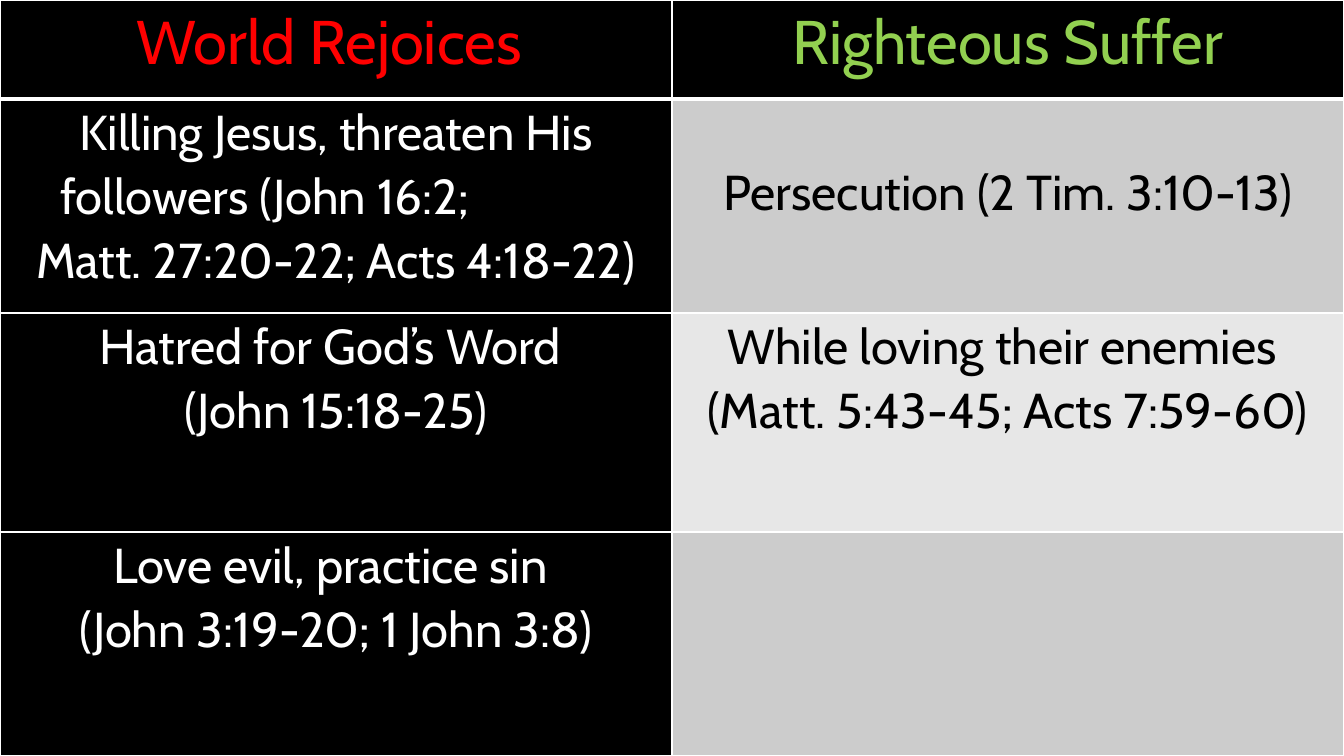
from lxml import etree
from pptx import Presentation
from pptx.dml.color import RGBColor
from pptx.enum.text import PP_ALIGN
from pptx.oxml.ns import qn
from pptx.util import Pt

CENTER = PP_ALIGN.CENTER
LEFT = PP_ALIGN.LEFT

PX = 914400 / 100.8
WIDTH, HEIGHT = 1344, 756
ROW_HEIGHTS = [99, 214, 219, 224]
INSET = 7
FONT = "Cabin"
HEAD_SIZE, BODY_SIZE = 44, 35

BLACK = RGBColor(0x00, 0x00, 0x00)
WHITE = RGBColor(0xFF, 0xFF, 0xFF)
RED = RGBColor(0xFF, 0x00, 0x00)
GREEN = RGBColor(0x92, 0xD0, 0x50)
GRAY = RGBColor(0xCC, 0xCC, 0xCC)
LIGHT_GRAY = RGBColor(0xE7, 0xE7, 0xE7)

HEADINGS = [("World Rejoices ", RED), ("Righteous Suffer", GREEN)]
WORLD = [
    ["Killing Jesus, threaten His", "followers (John 16:2;", "Matt. 27:20-22; Acts 4:18-22)"],
    ["Hatred for God’s Word ", "(John 15:18-25)"],
    ["Love evil, practice sin ", "(John 3:19-20; 1 John 3:8)"],
]
RIGHTEOUS = [
    ["Persecution (2 Tim. 3:10-13)"],
    ["While loving their enemies ", "(Matt. 5:43-45; Acts 7:59-60)"],
    [],
]
RIGHTEOUS_FILLS = [GRAY, LIGHT_GRAY, GRAY]


def px(n):
    return round(n * PX)


def set_borders(cell, bottom=1, top=1):
    tcPr = cell._tc.get_or_add_tcPr()
    widths = {"a:lnL": 1, "a:lnR": 1, "a:lnT": top, "a:lnB": bottom}
    for i, (tag, width) in enumerate(widths.items()):
        ln = etree.Element(qn(tag), w=str(Pt(width)))
        fill = etree.SubElement(ln, qn("a:solidFill"))
        etree.SubElement(fill, qn("a:srgbClr"), val=str(WHITE))
        tcPr.insert(i, ln)


def fill_cell(cell, lines, size, color, fill):
    cell.margin_left = cell.margin_right = px(INSET)
    cell.margin_top = cell.margin_bottom = 0
    cell.fill.solid()
    cell.fill.fore_color.rgb = fill
    tf = cell.text_frame
    for i, line in enumerate(lines):
        p = tf.add_paragraph() if i else tf.paragraphs[0]
        p.alignment = CENTER
        p.line_spacing = 1.07
        r = p.add_run()
        r.text = line
        r.font.name = FONT
        r.font.size = Pt(size)
        r.font.color.rgb = color


def indent_left(p, left):
    p.alignment = LEFT
    pPr = p._p.get_or_add_pPr()
    pPr.set("marL", str(px(left)))
    pPr.set("indent", "0")


def add_comparison(s):
    frame = s.shapes.add_table(len(ROW_HEIGHTS), 2, 0, 0, px(WIDTH), px(HEIGHT))
    table = frame.table
    for column in table.columns:
        column.width = px(WIDTH / 2)
    for row, height in zip(table.rows, ROW_HEIGHTS):
        row.height = px(height)

    for col, (heading, color) in enumerate(HEADINGS):
        cell = table.cell(0, col)
        fill_cell(cell, [heading], HEAD_SIZE, color, BLACK)
        set_borders(cell, bottom=3)

    body = zip(WORLD, RIGHTEOUS, RIGHTEOUS_FILLS)
    for row, (world, righteous, fill) in enumerate(body, 1):
        fill_cell(table.cell(row, 0), world, BODY_SIZE, WHITE, BLACK)
        fill_cell(table.cell(row, 1), righteous, BODY_SIZE, BLACK, fill)
        for col in range(2):
            set_borders(table.cell(row, col), top=3 if row == 1 else 1)

    indent_left(table.cell(1, 0).text_frame.paragraphs[1], 53)
    table.cell(1, 1).margin_top = px(60)


def main():
    prs = Presentation()
    prs.slide_width, prs.slide_height = px(WIDTH), px(HEIGHT)
    s = prs.slides.add_slide(prs.slide_layouts[6])
    s.background.fill.solid()
    s.background.fill.fore_color.rgb = BLACK
    add_comparison(s)
    prs.save("out.pptx")


if __name__ == "__main__":
    main()
